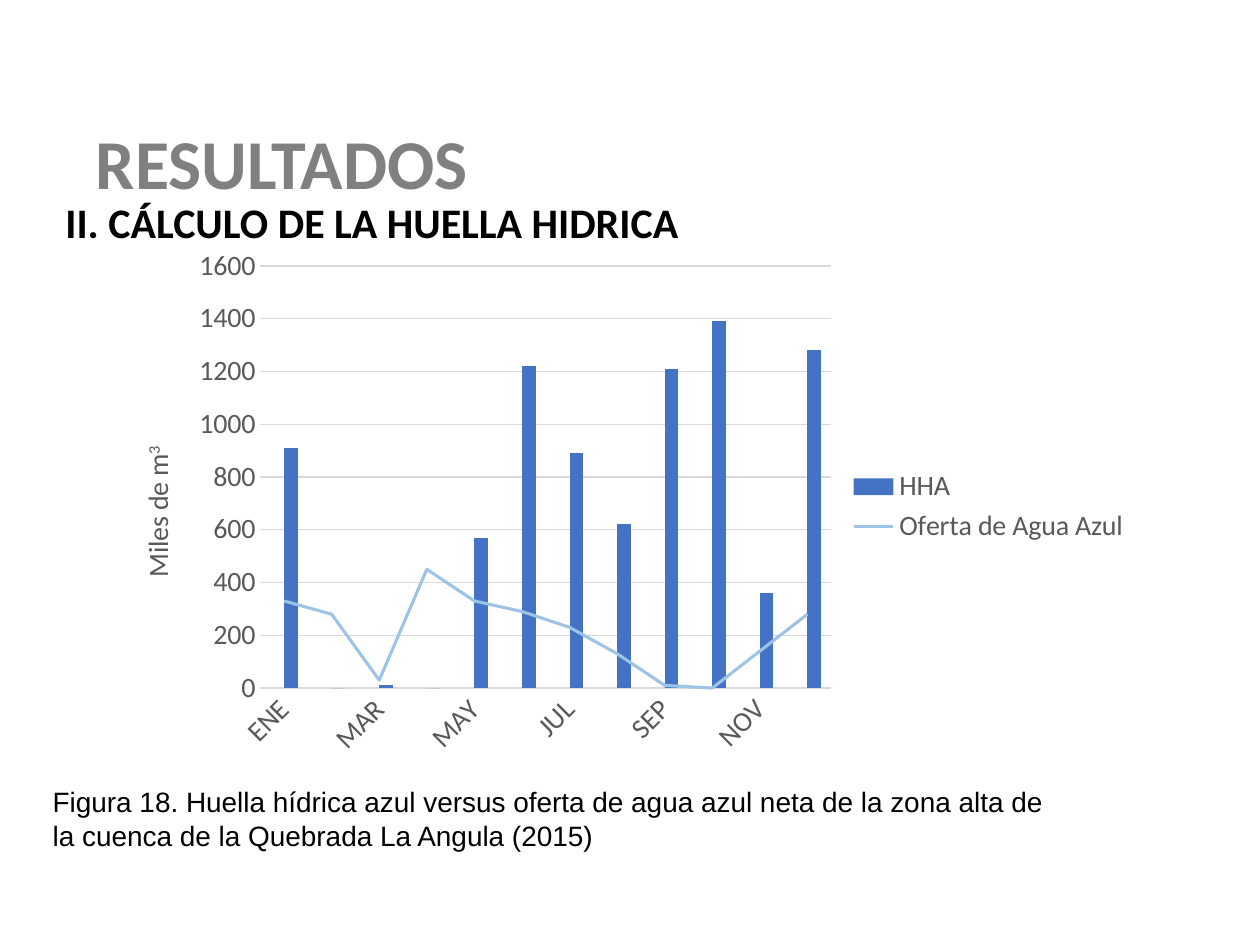
from lxml import etree
from pptx import Presentation
from pptx.chart.data import CategoryChartData
from pptx.dml.color import RGBColor
from pptx.enum.chart import XL_CHART_TYPE, XL_LEGEND_POSITION, XL_MARKER_STYLE, XL_TICK_MARK
from pptx.enum.text import MSO_ANCHOR, PP_ALIGN
from pptx.oxml import parse_xml
from pptx.oxml.ns import nsdecls, qn
from pptx.util import Inches, Pt

COLUMNS = XL_CHART_TYPE.COLUMN_CLUSTERED
RIGHT = XL_LEGEND_POSITION.RIGHT
NO_MARKER = XL_MARKER_STYLE.NONE
NO_TICK = XL_TICK_MARK.NONE
TOP, MIDDLE = MSO_ANCHOR.TOP, MSO_ANCHOR.MIDDLE
LEFT = PP_ALIGN.LEFT

TITLE = "RESULTADOS"
SUBTITLE = "II. CÁLCULO DE LA HUELLA HIDRICA"
CAPTION = ("Figura 18. Huella hídrica azul versus oferta de agua azul neta de la zona alta de "
           "la cuenca de la Quebrada La Angula (2015)")
MONTHS = ["ENE", "FEB", "MAR", "ABR.", "MAY", "JUN",
          "JUL", "AGO", "SEP", "OCT", "NOV", "DIC"]
EMPTY = [None] * len(MONTHS)
# The empty first column series sets the HHA columns right of the month centres.
COLUMN_SERIES = [
    ("Series 1", EMPTY, "FFC000"),
    ("HHA", [910, 0, 10, 0, 570, 1220, 890, 620, 1210, 1390, 360, 1280], "4472C4"),
]
LINE_SERIES = [
    ("Oferta de Agua Azul", [330, 280, 30, 450, 330, 290, 230, 130, 10, 0, 140, 280], "9DC3E6"),
    ("Series 4", EMPTY, "A5A5A5"),
]
ALL_SERIES = COLUMN_SERIES + LINE_SERIES
GREY, GRID = "595959", "D9D9D9"


def style_font(font, size, color, name="Calibri", bold=False):
    font.size, font.name, font.bold = Pt(size), name, bold
    font.color.rgb = RGBColor.from_string(color)


def style_line(line, color, width):
    line.color.rgb = RGBColor.from_string(color)
    line.width = Pt(width)


def write(shape, text, anchor, *font):
    frame = shape.text_frame
    frame.word_wrap = True
    frame.vertical_anchor = anchor
    run = frame.paragraphs[0].add_run()
    run.text = text
    style_font(run.font, *font)
    return frame.paragraphs[0]


def add_text(slide, box, text, *font):
    write(slide.shapes.add_textbox(*map(Inches, box)), text, TOP, *font)


def set_layout(parent, index, **fractions):
    """Place a chart part by fractions of the chart area."""
    for old in parent.findall(qn("c:layout")):
        parent.remove(old)
    values = "".join(f'<c:{key} val="{value}"/>' for key, value in fractions.items())
    parent.insert(index, parse_xml(
        f'<c:layout {nsdecls("c")}><c:manualLayout>{values}</c:manualLayout></c:layout>'))


def move_to_lines(chart, first):
    """Move the series from number `first` on into a line plot on the same axes."""
    columns = chart.plots[0]._element
    lines = parse_xml(f'<c:lineChart {nsdecls("c")}><c:grouping val="standard"/>'
                      '<c:varyColors val="0"/></c:lineChart>')
    for series in columns.findall(qn("c:ser"))[first:]:
        for column_only in series.findall(qn("c:invertIfNegative")):
            series.remove(column_only)
        lines.append(series)
    etree.SubElement(lines, qn("c:marker")).set("val", "1")
    for axis in columns.findall(qn("c:axId")):
        etree.SubElement(lines, qn("c:axId")).set("val", axis.get("val"))
    columns.addnext(lines)


def add_chart(slide, box):
    data = CategoryChartData()
    data.categories = MONTHS
    for name, values, _ in ALL_SERIES:
        data.add_series(name, values)
    chart = slide.shapes.add_chart(COLUMNS, *map(Inches, box), data).chart
    chart.has_title = False
    style_font(chart.font, 10, "000000")
    move_to_lines(chart, len(COLUMN_SERIES))

    columns, lines = chart.plots
    columns.gap_width, columns.overlap = 150, 0
    columns.vary_by_categories = False
    for series, (_, _, color) in zip(columns.series, COLUMN_SERIES):
        series.format.fill.solid()
        series.format.fill.fore_color.rgb = RGBColor.from_string(color)
    for series, (_, _, color) in zip(lines.series, LINE_SERIES):
        style_line(series.format.line, color, 1.75)
        series.marker.style = NO_MARKER
        series.smooth = False

    months, volume = chart.category_axis, chart.value_axis
    for axis in (months, volume):
        axis.major_tick_mark = axis.minor_tick_mark = NO_TICK
        style_font(axis.tick_labels.font, 16, GREY)
    style_line(months.format.line, GRID, 0.75)
    months._element.find(qn("c:txPr")).find(qn("a:bodyPr")).set("rot", "-2700000")
    skip = parse_xml(f'<c:tickLblSkip {nsdecls("c")} val="2"/>')
    months._element.find(qn("c:noMultiLvlLbl")).addprevious(skip)
    volume.minimum_scale, volume.maximum_scale, volume.major_unit = 0, 1600, 200
    volume.format.line.fill.background()
    style_line(volume.major_gridlines.format.line, GRID, 0.75)

    unit = volume.axis_title
    paragraph = unit.text_frame.paragraphs[0]
    for text, baseline in (("Miles de m", None), ("3", "30000")):
        run = paragraph.add_run()
        run.text = text
        style_font(run.font, 16, GREY)
        if baseline:
            run.font._element.set("baseline", baseline)
    body = unit._element.find(".//" + qn("a:bodyPr"))
    body.set("rot", "-5400000")
    body.set("vert", "horz")
    set_layout(unit._element, 1, xMode="edge", yMode="edge", x=0.03, y=0.38)
    set_layout(chart._chartSpace.chart.plotArea, 0, layoutTarget="inner",
               xMode="edge", yMode="edge", x=0.15, y=0.05, w=0.55, h=0.79)

    chart.has_legend = True
    legend = chart.legend
    legend.position, legend.include_in_layout = RIGHT, False
    style_font(legend.font, 16, GREY)
    unlisted = [i for i, (_, values, _) in enumerate(ALL_SERIES) if values is EMPTY]
    for index in reversed(unlisted):
        legend._element.find(qn("c:legendPos")).addnext(parse_xml(
            f'<c:legendEntry {nsdecls("c")}><c:idx val="{index}"/>'
            '<c:delete val="1"/></c:legendEntry>'))


def main():
    deck = Presentation()
    deck.slide_width, deck.slide_height = Inches(10), Inches(7.5)
    slide = deck.slides.add_slide(deck.slide_layouts.get_by_name("Title Only"))

    title = slide.shapes.title
    title.left, title.top, title.width, title.height = map(Inches, (0.66, 0.76, 8.62, 1.13))
    heading = write(title, TITLE, MIDDLE, 40, "808080", "Calibri", True)
    heading.alignment = LEFT
    heading.line_spacing = 0.9

    add_text(slide, (0.42, 1.51, 9.11, 0.5), SUBTITLE, 24, "000000", "Calibri", True)
    add_chart(slide, (0.83, 1.9, 8.24, 4.24))
    add_text(slide, (0.32, 6.18, 8.13, 0.94), CAPTION, 16, "000000", "Arial")
    deck.save("out.pptx")


if __name__ == "__main__":
    main()
